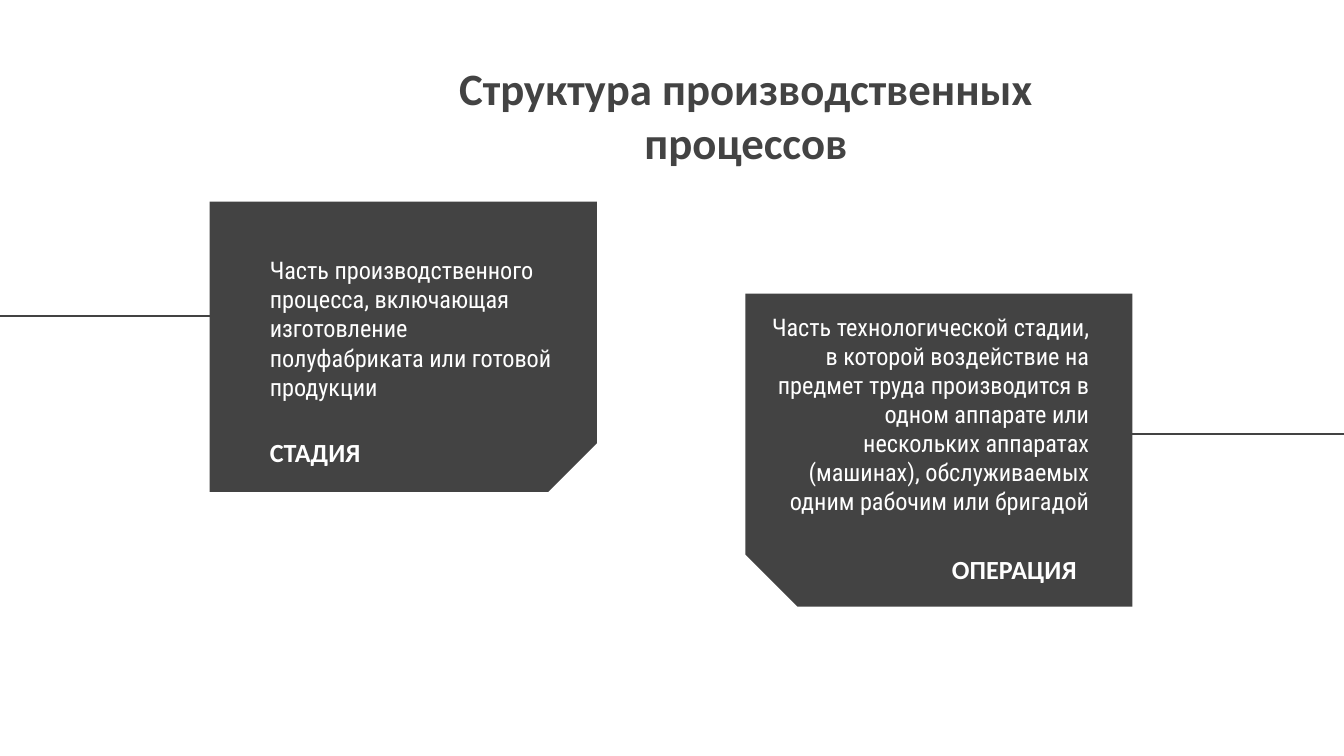
from lxml.etree import SubElement
from pptx import Presentation
from pptx.dml.color import RGBColor
from pptx.enum.shapes import MSO_CONNECTOR, MSO_SHAPE
from pptx.enum.text import MSO_ANCHOR, MSO_AUTO_SIZE, PP_ALIGN
from pptx.oxml.ns import qn
from pptx.util import Inches, Pt

COLORS = {"dark": "434343", "white": "FFFFFF"}
HEADING_FONT = "Calibri"
BODY_FONT = "Roboto Condensed"


def color(name):
    """Return the named palette colour."""
    return RGBColor.from_string(COLORS[name])


def place(shape, box):
    """Set left, top, width and height in inches."""
    shape.left, shape.top, shape.width, shape.height = map(Inches, box)


def write(shape, text, size, font_name, ink, align, anchor, bold=False):
    """Fill a shape with one formatted paragraph."""
    frame = shape.text_frame
    frame.word_wrap = True
    frame.auto_size = MSO_AUTO_SIZE.NONE
    frame.vertical_anchor = anchor
    frame.margin_left = frame.margin_right = Inches(0.1)
    frame.margin_top = frame.margin_bottom = Inches(0.1)
    paragraph = frame.paragraphs[0]
    paragraph.alignment = align
    run = paragraph.add_run()
    run.text = text
    run.font.size = Pt(size)
    run.font.name = font_name
    run.font.bold = bold
    run.font.color.rgb = color(ink)


def add_card(slide, box, rotation, mirrored=False):
    """Add a dark card with one snipped corner."""
    card = slide.shapes.add_shape(MSO_SHAPE.SNIP_1_RECTANGLE, *map(Inches, box))
    card.adjustments[0] = 0.167
    card.rotation = rotation
    card.shadow.inherit = False
    card.fill.solid()
    card.fill.fore_color.rgb = color("dark")
    card.line.fill.background()
    if mirrored:
        card.element.spPr.find(qn("a:xfrm")).set("flipH", "1")


def add_rule(slide, start, end, y):
    """Add a thin horizontal line from a card to the slide edge."""
    rule = slide.shapes.add_connector(
        MSO_CONNECTOR.STRAIGHT, Inches(start), Inches(y), Inches(end), Inches(y))
    rule.line.color.rgb = color("dark")
    rule.line.width = Pt(0.75)
    SubElement(rule.element.spPr, qn("a:effectLst"))


def add_label(slide, box, text, align):
    """Add the bold name at the foot of a card."""
    label = slide.shapes.add_textbox(*map(Inches, box))
    write(label, text, 14, HEADING_FONT, "white", align, MSO_ANCHOR.BOTTOM, bold=True)


def add_definition(slide, box, text, align):
    """Add the explanatory text of a card."""
    definition = slide.shapes.add_textbox(*map(Inches, box))
    write(definition, text, 13, BODY_FONT, "white", align, MSO_ANCHOR.TOP)


def main():
    """Build and save the slide."""
    deck = Presentation()
    deck.slide_width = Inches(10)
    deck.slide_height = Inches(10 * 9 / 16)
    slide = deck.slides.add_slide(deck.slide_layouts[5])

    title = slide.shapes.title
    place(title, (2.7, 0.35, 5.7, 1.03))
    write(title, "Структура производственных процессов", 24, HEADING_FONT,
          "dark", PP_ALIGN.CENTER, MSO_ANCHOR.TOP, bold=True)

    add_card(slide, (1.92, 1.14, 2.16, 2.88), 90)
    add_rule(slide, 2.65, 0, 2.35)
    add_label(slide, (1.91, 3.11, 1.38, 0.47), "СТАДИЯ", PP_ALIGN.LEFT)
    add_definition(
        slide, (1.91, 1.8, 2.36, 1.1),
        "Часть производственного процесса, включающая изготовление "
        "полуфабриката или готовой продукции", PP_ALIGN.LEFT)

    add_card(slide, (5.82, 1.91, 2.33, 2.88), 270, mirrored=True)
    add_rule(slide, 7.31, 10, 3.23)
    add_label(slide, (6.16, 3.98, 1.95, 0.47), "ОПЕРАЦИЯ", PP_ALIGN.RIGHT)
    add_definition(
        slide, (5.58, 2.22, 2.62, 1.1),
        "Часть технологической стадии, в которой воздействие на предмет труда "
        "производится в одном аппарате или нескольких аппаратах (машинах), "
        "обслуживаемых одним рабочим или бригадой", PP_ALIGN.RIGHT)

    deck.save("out.pptx")


if __name__ == "__main__":
    main()
